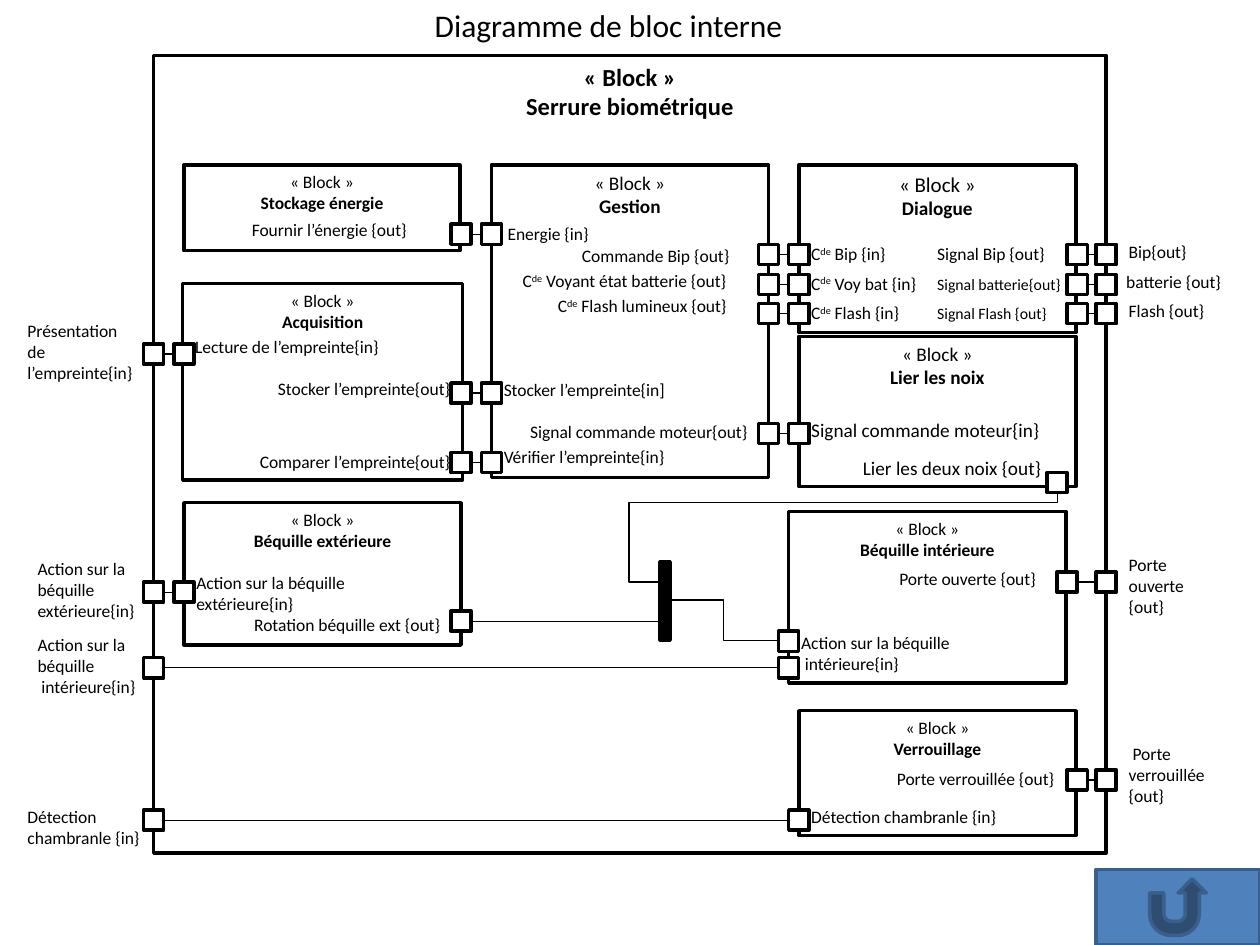
from dataclasses import dataclass

from lxml.etree import SubElement
from pptx import Presentation
from pptx.dml.color import RGBColor
from pptx.enum.shapes import MSO_CONNECTOR, MSO_SHAPE
from pptx.enum.text import MSO_ANCHOR, PP_ALIGN
from pptx.oxml.ns import qn
from pptx.util import Inches, Pt


@dataclass(frozen=True)
class Theme:
    font: str = "Calibri"
    ink: str = "000000"
    paper: str = "FFFFFF"
    button: str = "4F81BD"
    button_edge: str = "3A5F8C"
    title: int = 18
    frame: int = 14
    label: int = 10
    border: float = 2
    link: float = 0.75
    port: float = 0.16


class Diagram:
    """Holds the style and the current slide."""

    def __init__(self, s, theme):
        self.s, self.theme = s, theme

    def add_line(self, p, text, size, bold=False, gap=0, indent=0, tab=0, tab_size=None, align="l"):
        """Text between ^ marks is raised; a tab leads to the second column."""
        p.alignment = {"l": PP_ALIGN.LEFT, "c": PP_ALIGN.CENTER, "r": PP_ALIGN.RIGHT}[align]
        p.space_before = Pt(gap)
        pPr = p._p.get_or_add_pPr()
        pPr.set("marL", str(Inches(indent)))
        pPr.set("indent", "0")
        if tab:
            stops = SubElement(pPr, qn("a:tabLst"))
            SubElement(stops, qn("a:tab"), pos=str(Inches(tab)), algn="l")
        left, mark, right = text.partition("\t")
        for column, pt in ((left + mark, size), (right, tab_size or size)):
            for i, part in enumerate(column.split("^")):
                if not part:
                    continue
                r = p.add_run()
                r.text = part
                style = {"name": self.theme.font, "size": Pt(pt), "bold": bold}
                for key, value in style.items():
                    setattr(r.font, key, value)
                r.font.color.rgb = RGBColor.from_string(self.theme.ink)
                if i % 2:
                    r._r.get_or_add_rPr().set("baseline", "30000")

    def fill_text(self, tf, lines):
        tf.word_wrap = True
        tf.vertical_anchor = MSO_ANCHOR.TOP
        for i, line in enumerate(lines):
            p = tf.add_paragraph() if i else tf.paragraphs[0]
            self.add_line(p, **line)

    def title(self, text, x, y, w, h):
        sp = self.s.shapes.title
        for key, value in {"left": x, "top": y, "width": w, "height": h}.items():
            setattr(sp, key, Inches(value))
        self.fill_text(sp.text_frame, [{"text": text, "size": self.theme.title}])

    def shape(self, x, y, w, h, fill=None, line=None, kind=MSO_SHAPE.RECTANGLE):
        sp = self.s.shapes.add_shape(kind, Inches(x), Inches(y), Inches(w), Inches(h))
        sp.shadow.inherit = False
        sp.fill.solid()
        sp.fill.fore_color.rgb = RGBColor.from_string(fill or self.theme.paper)
        sp.line.color.rgb = RGBColor.from_string(line or self.theme.ink)
        sp.line.width = Pt(self.theme.border)
        return sp

    def block(self, box, name, flows=(), head=10, name_size=None, bold_head=False):
        lines = [{"text": "« Block »", "size": head, "bold": bold_head, "align": "c"},
                 {"text": name, "size": name_size or head, "bold": True, "align": "c"}]
        lines += [{"size": self.theme.label, **item} for item in flows]
        self.fill_text(self.shape(*box).text_frame, lines)

    def port(self, x, y):
        self.shape(x, y, self.theme.port, self.theme.port)

    def label(self, x, y, lines, w=1.14):
        sp = self.s.shapes.add_textbox(Inches(x), Inches(y), Inches(w), Inches(0.2 * len(lines)))
        self.fill_text(sp.text_frame, [{"text": t, "size": self.theme.label} for t in lines])

    def link(self, x1, y1, x2, y2, kind=MSO_CONNECTOR.STRAIGHT):
        c = self.s.shapes.add_connector(kind, Inches(x1), Inches(y1), Inches(x2), Inches(y2))
        c.line.color.rgb = RGBColor.from_string(self.theme.ink)
        c.line.width = Pt(self.theme.link)
        SubElement(c._element.spPr, qn("a:effectLst"))
        return c

    def bent_link(self, x, y, w, h, turn, bends, flip=False):
        """Four-part elbow: the box before turning, and its bends in percent."""
        spPr = self.link(x, y, x + w, y + h, MSO_CONNECTOR.ELBOW)._element.spPr
        xfrm, geom = spPr.find(qn("a:xfrm")), spPr.find(qn("a:prstGeom"))
        xfrm.set("rot", str(turn * 60000))
        if flip:
            xfrm.set("flipH", "1")
        geom.set("prst", "bentConnector4")
        guides = geom.find(qn("a:avLst"))
        if guides is None:
            guides = SubElement(geom, qn("a:avLst"))
        for i, bend in enumerate(bends, 1):
            SubElement(guides, qn("a:gd"), name=f"adj{i}", fmla=f"val {round(bend * 1000)}")


def flow(text, gap=0, indent=0, **extra):
    return {"text": text, "gap": gap, "indent": indent, **extra}


def main():
    prs = Presentation()
    prs.slide_width, prs.slide_height = Inches(10), Inches(7.5)
    theme = Theme()
    d = Diagram(prs.slides.add_slide(prs.slide_layouts[5]), theme)
    d.title("Diagramme de bloc interne", 3.35, 0, 3.39, 0.4)

    # Outer block
    d.block((1.22, 0.44, 7.56, 6.33), "Serrure biométrique", head=theme.frame, bold_head=True)

    # Inner blocks and their flows
    d.block((1.46, 1.31, 2.19, 0.68), "Stockage énergie",
            [flow("Fournir l’énergie {out}", 3.5, 0.44)])
    d.block((1.45, 2.25, 2.22, 1.56), "Acquisition", [
        flow("Lecture de l’empreinte{in}", 2.4),
        flow("Stocker l’empreinte{out}", 12.2, align="r"),
        flow("Comparer l’empreinte{out}", 29.3, align="r")])
    d.block((3.9, 1.31, 2.2, 2.48), "Gestion", [
        flow("Energie {in}", 3, 0.03),
        flow("Commande Bip {out}", 0.5, 0.62),
        flow("C^de^ Voyant état batterie {out}", 2.4, 0.15),
        flow("C^de^ Flash lumineux {out}", 2.4, 0.43),
        flow("Stocker l’empreinte{in]", 36),
        flow("Signal commande moteur{out}", 12, 0.21),
        flow("Vérifier l’empreinte{in}", 2.4)], head=11)
    d.block((6.34, 1.31, 2.2, 1.33), "Dialogue", [
        flow("C^de^ Bip {in}\tSignal Bip {out}", 13.4, tab=0.93),
        flow("C^de^ Voy bat {in}\tSignal batterie{out}", 4.9, tab=0.92, tab_size=9),
        flow("C^de^ Flash {in}\tSignal Flash {out}", 4.9, tab=1, tab_size=9)],
        head=12, name_size=11)
    d.block((6.34, 2.67, 2.2, 1.19), "Lier les noix", [
        flow("Signal commande moteur{in}", 17, size=11),
        flow("Lier les deux noix {out}", 8.5, 0.41, size=11)], head=11)
    d.block((1.46, 3.99, 2.2, 1.13), "Béquille extérieure", [
        flow("Action sur la béquille", 12.2),
        flow("extérieure{in}"),
        flow("Rotation béquille ext {out}", 0, 0.46)])
    d.block((6.26, 4.06, 2.2, 1.36), "Béquille intérieure", [
        flow("Porte ouverte {out}", 4.9, 0.78),
        flow("Action sur la béquille", 24.4),
        flow("intérieure{in}", 0, 0.03)])
    d.block((6.34, 5.64, 2.2, 0.99), "Verrouillage", [
        flow("Porte verrouillée {out}", 4.9, 0.68),
        flow("Détection chambranle {in}", 9.8)])

    # Links between facing ports: start, end, heights
    signals = (2.02, 2.26, 2.49)
    links = [(1.3, 1.38, (2.81, 4.7)), (3.74, 3.82, (1.86, 3.12, 3.67)),
             (6.18, 6.26, (*signals, 3.44)), (8.62, 8.7, (*signals, 6.19)),
             (8.54, 8.7, (4.62,)), (1.3, 6.18, (5.3,)),
             (1.3, 6.26, (6.51,)), (3.74, 5.24, (4.93,))]
    for x1, x2, heights in links:
        for y in heights:
            d.link(x1, y, x2, y)
    d.bent_link(6.46, 2.69, 0.71, 3.15, 90, (11.4, 107.9))
    d.bent_link(5.57, 4.48, 0.31, 0.9, 270, (-4.4, 52.2), flip=True)

    # Junction bar
    for y in (4.46, 4.77):
        d.shape(5.24, y, 0.08, 0.31, fill=theme.ink)

    # Ports by column
    rows = (1.94, 2.18, 2.41)
    ports = {1.14: (2.73, 4.62, 5.22, 6.43), 1.38: (2.73, 4.62),
             3.58: (1.78, 3.04, 3.59, 4.85), 3.82: (1.78, 3.04, 3.59),
             6.02: (*rows, 3.36), 6.18: (5.01, 5.22), 6.26: (*rows, 3.36, 6.43),
             8.31: (3.75,), 8.39: (4.54,), 8.47: (*rows, 6.11),
             8.7: (*rows, 4.54, 6.11)}
    for x, tops in ports.items():
        for y in tops:
            d.port(x, y)

    # Inputs and outputs of the system
    d.label(0.12, 2.49, ["Présentation", "de", "l’empreinte{in}"])
    d.label(0.2, 4.38, ["Action sur la", "béquille", "extérieure{in}"])
    d.label(0.2, 4.98, ["Action sur la", "béquille", " intérieure{in}"])
    d.label(0.12, 6.35, ["Détection", "chambranle {in}"])
    d.label(8.86, 1.86, ["Bip{out}"])
    d.label(8.84, 2.1, ["batterie {out}"])
    d.label(8.86, 2.33, ["Flash {out}"])
    d.label(8.86, 4.35, ["Porte ouverte {out}"], w=0.74)
    d.label(8.86, 5.85, [" Porte", "verrouillée", "{out}"])

    # Return button
    d.shape(8.7, 6.9, 1.3, 0.6, theme.button, theme.button_edge, MSO_SHAPE.ACTION_BUTTON_RETURN)
    prs.save("out.pptx")


if __name__ == "__main__":
    main()
